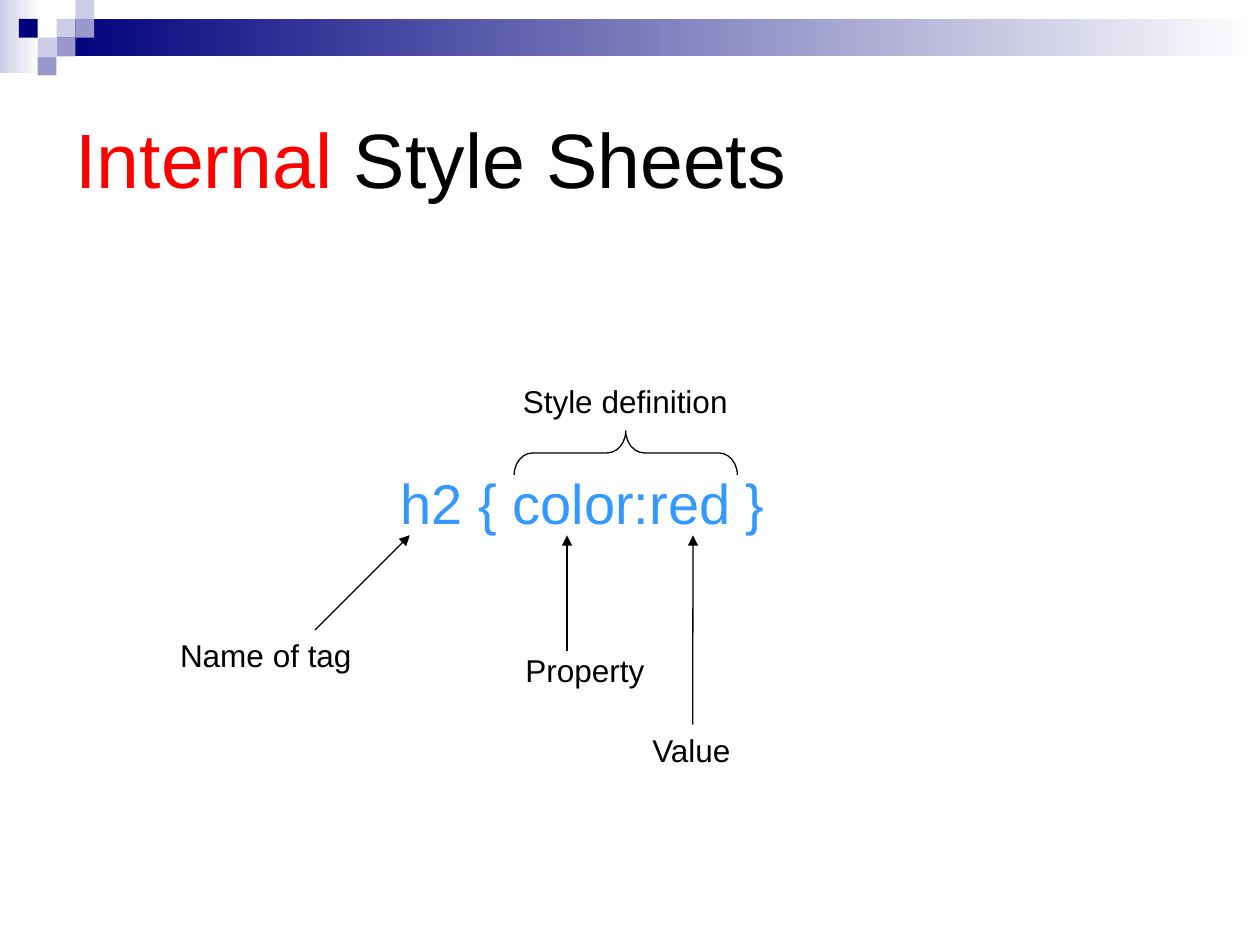
import pptx
import pptx.dml.color
import pptx.enum.shapes
import pptx.enum.text
import pptx.oxml.ns
import pptx.util
from lxml import etree

Cm = pptx.util.Cm
SHAPES = pptx.enum.shapes.MSO_SHAPE
NAVY, LAVENDER, LILAC, WHITE = "00007D", "CCCCE6", "9999CC", "FFFFFF"
BLACK, RED, BLUE = "000000", "FF0000", "3399FF"


def color(hex_string):
    return pptx.dml.color.RGBColor.from_string(hex_string)


def add_xml(parent, tag, **attributes):
    return etree.SubElement(parent, pptx.oxml.ns.qn(tag), attributes)


def place(shape, left, top, width, height):
    shape.left, shape.top = Cm(left), Cm(top)
    shape.width, shape.height = Cm(width), Cm(height)


def add_text(paragraph, text, size=18, fill=BLACK, font="Arial"):
    run = paragraph.add_run()
    run.text = text
    run.font.name = font
    run.font.size = pptx.util.Pt(size)
    run.font.color.rgb = color(fill)


def add_block(slide, left, top, width, height, *fills):
    """Add a borderless rectangle: one fill is solid, two make a gradient."""
    block = slide.shapes.add_shape(
        SHAPES.RECTANGLE, Cm(left), Cm(top), Cm(width), Cm(height))
    block.shadow.inherit = False
    block.line.fill.background()
    if len(fills) == 1:
        block.fill.solid()
        block.fill.fore_color.rgb = color(fills[0])
    else:
        block.fill.gradient()
        block.fill.gradient_angle = 0
        for stop, fill in zip(block.fill.gradient_stops, fills):
            stop.color.rgb = color(fill)


def add_banner(slide, left, top, width):
    """Draw the fading bar and its squares on a grid of equal cells."""
    cell = 0.38
    add_block(slide, left, top, 0.79, 1.47, LAVENDER, WHITE)
    add_block(slide, left + 3 * cell, top + cell, width - 3 * cell, 2 * cell,
              NAVY, WHITE)
    squares = [(3, 1, LAVENDER), (4, 0, LAVENDER), (4, 1, LILAC),
               (2, 2, LAVENDER), (1, 1, NAVY), (3, 2, LILAC), (2, 3, LILAC)]
    for column, row, fill in squares:
        add_block(slide, left + column * cell, top + row * cell,
                  cell, cell, fill)


def add_title(slide, left, top, width, height):
    title = slide.shapes.title
    place(title, left, top, width, height)
    title.text_frame.vertical_anchor = pptx.enum.text.MSO_ANCHOR.MIDDLE
    paragraph = title.text_frame.paragraphs[0]
    paragraph.alignment = pptx.enum.text.PP_ALIGN.LEFT
    add_text(paragraph, "Internal", size=44, fill=RED)
    add_text(paragraph, " Style Sheets", size=44)


def add_rule(slide, left, top, width, height):
    """Put the style rule into the body placeholder, without a bullet."""
    body = slide.placeholders[1]
    place(body, left, top, width, height)
    paragraph = body.text_frame.paragraphs[0]
    add_text(paragraph, "h2 { color:red }", size=32, fill=BLUE)
    properties = paragraph._p.get_or_add_pPr()
    properties.set("marL", str(Cm(0.95)))
    properties.set("indent", str(-Cm(0.95)))
    add_xml(properties, "a:buNone")


def add_label(slide, text, left, top, width):
    label = slide.shapes.add_textbox(Cm(left), Cm(top), Cm(width), Cm(1.02))
    label.text_frame.word_wrap = False
    label.text_frame.auto_size = pptx.enum.text.MSO_AUTO_SIZE.SHAPE_TO_FIT_TEXT
    add_text(label.text_frame.paragraphs[0], text)
    return label


def add_brace(slide, left, top, width, height):
    brace = slide.shapes.add_shape(
        SHAPES.RIGHT_BRACE, Cm(left), Cm(top), Cm(width), Cm(height))
    brace.rotation = 270
    brace.adjustments[0] = 0.42
    brace.shadow.inherit = False
    brace.fill.background()
    brace.line.color.rgb = color(BLACK)
    brace.line.width = pptx.util.Pt(0.75)


def add_arrow(slide, start, end):
    arrow = slide.shapes.add_connector(
        pptx.enum.shapes.MSO_CONNECTOR.STRAIGHT,
        *(Cm(value) for value in start + end))
    arrow.line.color.rgb = color(BLACK)
    arrow.line.width = pptx.util.Pt(0.75)
    add_xml(arrow.line._get_or_add_ln(), "a:tailEnd", type="triangle")
    add_xml(arrow._element.spPr, "a:effectLst")
    return arrow


def add_diagram(slide, left, top):
    """Annotate the style rule with a brace above and arrows below."""
    add_rule(slide, left + 4.44, top + 1.75, 8.46, 2.11)
    add_brace(slide, left + 8.79, top - 0.69, 0.89, 4.5)
    add_label(slide, "Style definition", left + 6.91, top, 4.65)

    arrow_tip = top + 3.22
    parts = [  # text, label left, top and width, arrow start x and y, end x
        ("Name of tag", 0, 5.13, 3.96, 2.97, 5.13, 4.88),
        ("Property", 6.96, 5.43, 2.92, 8.05, 5.56, 8.05),
        ("Value", 9.52, 7.04, 2.13, 10.59, 7.04, 10.59),
    ]
    for text, label_left, label_top, width, start_x, start_y, end_x in parts:
        label = add_label(slide, text, left + label_left, top + label_top, width)
        arrow = add_arrow(slide, (left + start_x, top + start_y),
                          (left + end_x, arrow_tip))
        if text == "Value":
            arrow.begin_connect(label, 0)


def main():
    presentation = pptx.Presentation()
    presentation.slide_width, presentation.slide_height = Cm(25.4), Cm(19.05)
    slide = presentation.slides.add_slide(presentation.slide_layouts[1])
    add_banner(slide, 0, 0, 25.4)
    add_title(slide, 1.27, 1.27, 22.86, 3.81)
    add_diagram(slide, 3.38, 7.57)
    presentation.save("out.pptx")


if __name__ == "__main__":
    main()
